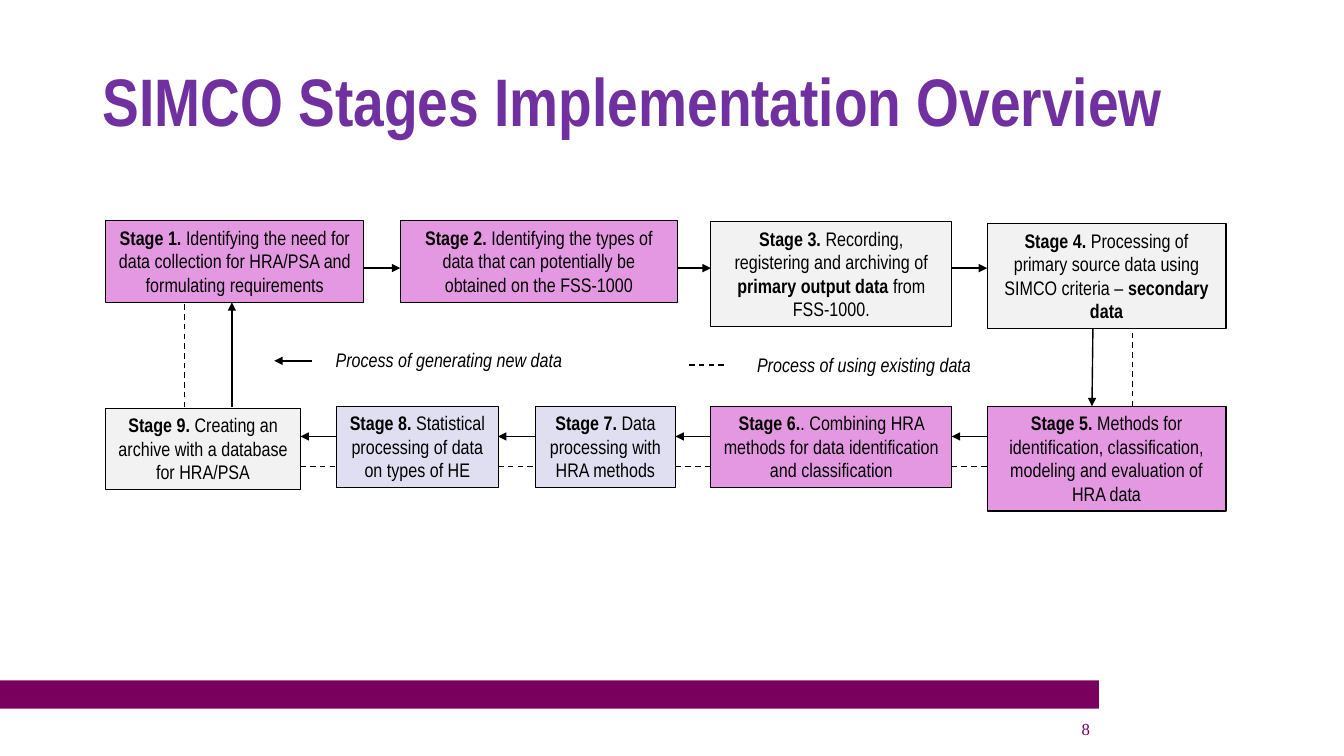
from pptx import Presentation
from pptx.dml.color import RGBColor
from pptx.enum.dml import MSO_LINE
from pptx.enum.shapes import MSO_CONNECTOR, MSO_SHAPE
from pptx.enum.text import MSO_ANCHOR, PP_ALIGN
from pptx.oxml.ns import qn
from pptx.util import Inches, Pt
from lxml.etree import SubElement

rgb = RGBColor.from_string
PURPLE, PLUM, BLACK = "7030A0", "7A005E", "000000"
PINK, GREY, LILAC = "E498E1", "F2F2F2", "E0DFF1"
TOP_ROW, BOTTOM_ROW = 2.19, 4.03
ARROW_Y, DASH_Y = 4.33, 4.63
LINE_H = 0.23

# Left, top, width, text lines, fill, text; every other part between asterisks is bold
STAGES = [
    (1.05, TOP_ROW, 2.56, 3, PINK,
     "Stage 1.* Identifying the need for data collection for HRA/PSA and formulating requirements"),
    (3.97, TOP_ROW, 2.75, 3, PINK,
     "Stage 2.* Identifying the types of data that can potentially be obtained on the FSS-1000"),
    (7.05, 2.2, 2.39, 4, GREY,
     "Stage 3.* Recording, registering and archiving of *primary output data *from FSS-1000."),
    (9.79, 2.22, 2.37, 4, GREY,
     "Stage 4. *Processing of primary source data using SIMCO criteria – *secondary data"),
    (9.79, BOTTOM_ROW, 2.37, 4, PINK,
     "Stage 5.* Methods for identification, classification, modeling and evaluation of HRA data"),
    (7.05, BOTTOM_ROW, 2.39, 3, PINK,
     "Stage 6.*. Combining HRA methods for data identification and classification"),
    (5.31, BOTTOM_ROW, 1.39, 3, LILAC, "Stage 7.* Data processing with HRA methods"),
    (3.34, BOTTOM_ROW, 1.6, 3, LILAC, "Stage 8.* Statistical processing of data on types of HE"),
    (1.05, 4.05, 1.93, 3, GREY, "Stage 9.* Creating an archive with a database for HRA/PSA"),
]

prs = Presentation()
prs.slide_width, prs.slide_height = Inches(13.33), Inches(7.5)
slide = prs.slides.add_slide(prs.slide_layouts[5])
shapes = slide.shapes


def style(run, size, color=BLACK, name="Arial Narrow", bold=False, italic=False):
    font = run.font
    font.size, font.name, font.bold, font.italic = Pt(size), name, bold, italic
    font.color.rgb = rgb(color)


def link(x1, y1, x2, y2, dashed=False):
    """Draw an arrow, or a plain dashed line, between two points in inches."""
    line = shapes.add_connector(MSO_CONNECTOR.STRAIGHT, *map(Inches, (x1, y1, x2, y2)))
    line.line.width = Pt(1)
    line.line.color.rgb = rgb(BLACK)
    if dashed:
        line.line.dash_style = MSO_LINE.DASH
    else:
        SubElement(line.line._get_or_add_ln(), qn("a:tailEnd"), type="triangle")
    SubElement(line._element.spPr, qn("a:effectLst"))


# Footer bar and page number
bar = shapes.add_shape(MSO_SHAPE.RECTANGLE, 0, Inches(6.75), Inches(10.9), Inches(0.28))
bar.shadow.inherit = False
bar.fill.solid()
bar.fill.fore_color.rgb = rgb(PLUM)
bar.line.fill.background()

number = shapes.add_textbox(*map(Inches, (9.42, 7.03, 1.49, 0.4)))
tf = number.text_frame
tf.word_wrap, tf.vertical_anchor = True, MSO_ANCHOR.MIDDLE
p = tf.paragraphs[0]
p.text, p.alignment = "8", PP_ALIGN.RIGHT
style(p.runs[0], 12, PLUM, "Times New Roman")

# Title
title = shapes.title
title.left, title.top, title.width, title.height = map(Inches, (0.92, 0.31, 11.47, 1.45))
tf = title.text_frame
tf.text = "SIMCO Stages Implementation Overview"
tf.vertical_anchor = MSO_ANCHOR.MIDDLE
p = tf.paragraphs[0]
p.alignment, p.line_spacing = PP_ALIGN.LEFT, 0.9
style(p.runs[0], 48, PURPLE, bold=True)

# Stage boxes
for left, top, width, lines, fill, text in STAGES:
    height = lines * LINE_H + 0.12
    sp = shapes.add_shape(MSO_SHAPE.RECTANGLE, *map(Inches, (left, top, width, height)))
    sp.shadow.inherit = False
    sp.fill.solid()
    sp.fill.fore_color.rgb = rgb(fill)
    sp.line.color.rgb = rgb(BLACK)
    sp.line.width = Pt(0.75)
    tf = sp.text_frame
    tf.word_wrap, tf.vertical_anchor = True, MSO_ANCHOR.TOP
    p = tf.paragraphs[0]
    p.alignment = PP_ALIGN.CENTER
    for i, part in enumerate(text.split("*")):
        r = p.add_run()
        r.text = part
        style(r, 14, bold=i % 2 == 0)

# Links along the top row, then back along the bottom row
for (left, _, width, *_), after in zip(STAGES[:3], STAGES[1:4]):
    link(left + width, 2.66, after[0], 2.66)
for before, (left, _, width, *_) in zip(STAGES[4:8], STAGES[5:]):
    link(before[0], ARROW_Y, left + width, ARROW_Y)
    link(left + width, DASH_Y, before[0], DASH_Y, dashed=True)

# Links between the rows
link(10.84, 3.26, 10.83, BOTTOM_ROW)
link(11.23, BOTTOM_ROW, 11.23, 3.26, dashed=True)
link(2.3, 4.04, 2.3, 3)
link(1.83, 4.04, 1.83, 3, dashed=True)

# Legend
link(3.09, 3.58, 2.72, 3.58)
link(7.18, 3.62, 6.8, 3.62, dashed=True)
for left, top, width, text in [(3.23, 3.4, 2.62, "Process of generating new data"),
                               (7.41, 3.45, 2.49, "Process of using existing data")]:
    label = shapes.add_textbox(*map(Inches, (left, top, width, 0.38)))
    tf = label.text_frame
    tf.word_wrap = True
    tf.text = text
    style(tf.paragraphs[0].runs[0], 14, italic=True)

prs.save("out.pptx")
